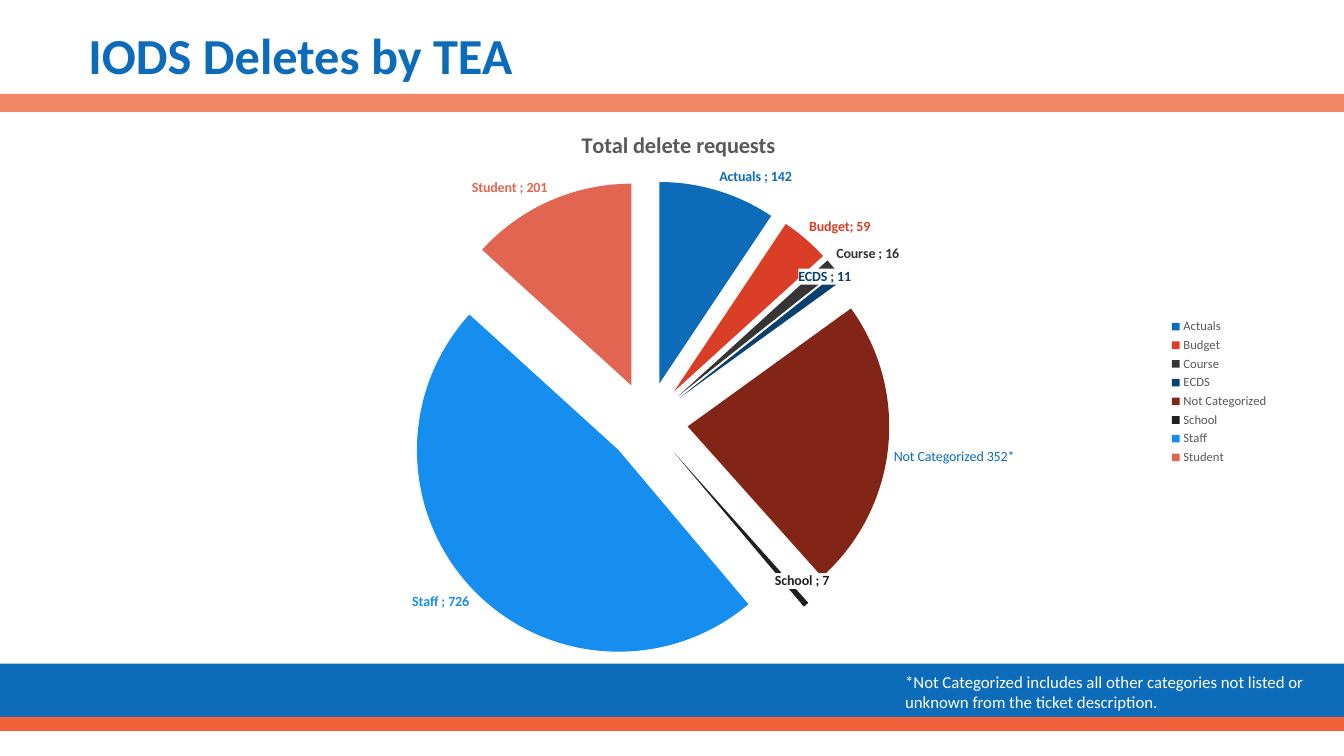
from dataclasses import dataclass

from lxml import etree
from pptx import Presentation
from pptx.chart.data import CategoryChartData
from pptx.dml.color import RGBColor
from pptx.enum.chart import XL_CHART_TYPE, XL_LABEL_POSITION, XL_LEGEND_POSITION
from pptx.enum.shapes import MSO_SHAPE
from pptx.enum.text import MSO_ANCHOR, PP_ALIGN
from pptx.oxml import parse_xml
from pptx.util import Pt

PIE = XL_CHART_TYPE.PIE_EXPLODED
OUTSIDE_END = XL_LABEL_POSITION.OUTSIDE_END
LEGEND_RIGHT = XL_LEGEND_POSITION.RIGHT
RECTANGLE = MSO_SHAPE.RECTANGLE
MIDDLE = MSO_ANCHOR.MIDDLE
LEFT = PP_ALIGN.LEFT
CHART_NS = "http://schemas.openxmlformats.org/drawingml/2006/chart"
DRAWING_NS = "http://schemas.openxmlformats.org/drawingml/2006/main"
C = f"{{{CHART_NS}}}"


@dataclass(frozen=True)
class Theme:
    font: str = "Calibri"
    blue: str = "0D6CB9"
    orange: str = "F16038"
    salmon: str = "F48668"
    white: str = "FFFFFF"
    grey: str = "595959"
    black: str = "000000"
    title_size: float = 36
    chart_title_size: float = 16
    note_size: float = 12
    label_size: float = 10
    legend_size: float = 9


THEME = Theme()

REQUESTS = [
    ("Actuals ", 142, THEME.blue),
    ("Budget", 59, "DA3E26"),
    ("Course ", 16, "363534"),
    ("ECDS ", 11, "08416F"),
    ("Not Categorized", 354, "832516"),
    ("School ", 7, "20201F"),
    ("Staff ", 726, "168EEF"),
    ("Student ", 201, "E16551"),
]
WRITTEN_LABELS = {"Not Categorized": "Not Categorized 352*"}
LABEL_SHIFTS = {"ECDS ": (-0.04, 0.02), "School ": (-0.03, -0.06)}


def style_font(font, size, color, bold=False):
    font.name = THEME.font
    font.size = Pt(size)
    font.bold = bold
    font.color.rgb = RGBColor.from_string(color)


def write_text(frame, text, *, size, color, bold=False, spacing=None, align=LEFT):
    paragraph = frame.paragraphs[0]
    paragraph.alignment = align
    paragraph.line_spacing = spacing
    run = paragraph.add_run()
    run.text = text
    style_font(run.font, size, color, bold)


def add_band(slide, box, color):
    band = slide.shapes.add_shape(RECTANGLE, *map(Pt, box))
    band.shadow.inherit = False
    band.fill.solid()
    band.fill.fore_color.rgb = RGBColor.from_string(color)
    band.line.fill.background()


def set_layout(parent, index, **settings):
    for old in parent.findall(C + "layout"):
        parent.remove(old)
    layout = etree.Element(C + "layout")
    manual = etree.SubElement(layout, C + "manualLayout")
    for tag, value in settings.items():
        etree.SubElement(manual, C + tag).set("val", str(value))
    parent.insert(index, layout)


def add_header(slide, box):
    left, top, width, height = box
    title = slide.shapes.title
    title.left, title.top = Pt(left + 56), Pt(top + 12)
    title.width, title.height = Pt(width - 84), Pt(59)
    title.text_frame.vertical_anchor = MIDDLE
    write_text(title.text_frame, "IODS Deletes by TEA", size=THEME.title_size,
               color=THEME.blue, bold=True, spacing=0.9)
    add_band(slide, (left, top + height - 13, width, 13), THEME.salmon)


def add_footer(slide, box):
    left, top, width, height = box
    add_band(slide, (left, top, width, height - 10), THEME.blue)
    add_band(slide, (left, top + height - 10, width, 10), THEME.orange)
    note = slide.shapes.add_textbox(Pt(left + 639.4), Pt(top + 2), Pt(310.3), Pt(36))
    note.text_frame.word_wrap = True
    write_text(note.text_frame,
               "*Not Categorized includes all other categories not listed or "
               "unknown from the ticket description.",
               size=THEME.note_size, color=THEME.white)


def label_slice(point, category, color):
    label = point.data_label
    if category in WRITTEN_LABELS:
        write_text(label.text_frame, WRITTEN_LABELS[category],
                   size=THEME.label_size, color=THEME.blue)
        label.position = OUTSIDE_END
        return
    style_font(label.font, THEME.label_size, color, bold=True)
    label.position = OUTSIDE_END
    element = label._get_or_add_dLbl()
    element.find(C + "showCatName").set("val", "1")
    etree.SubElement(element, C + "separator").text = "; "
    element.find(C + "txPr").addprevious(parse_xml(
        f'<c:spPr xmlns:c="{CHART_NS}" xmlns:a="{DRAWING_NS}"><a:solidFill>'
        f'<a:srgbClr val="{THEME.white}"/></a:solidFill></c:spPr>'))
    if category in LABEL_SHIFTS:
        x, y = LABEL_SHIFTS[category]
        set_layout(element, 1, x=x, y=y)


def add_requests_chart(slide, box):
    data = CategoryChartData()
    data.categories = [category for category, _, _ in REQUESTS]
    data.add_series("Series 1", [count for _, count, _ in REQUESTS])
    chart = slide.shapes.add_chart(PIE, *map(Pt, box), data).chart
    style_font(chart.font, THEME.label_size, THEME.black)

    write_text(chart.chart_title.text_frame, "Total delete requests",
               size=THEME.chart_title_size, color=THEME.grey, bold=True)
    set_layout(chart.chart_title._element, 1, xMode="edge", yMode="edge", x=0.4, y=0.06)

    chart.has_legend = True
    chart.legend.position = LEGEND_RIGHT
    chart.legend.include_in_layout = False
    style_font(chart.legend.font, THEME.legend_size, THEME.grey)

    plot = chart.plots[0]
    plot.vary_by_categories = True
    set_layout(plot._element.getparent(), 0, layoutTarget="inner", xMode="edge",
               yMode="edge", x=0.03, y=0.15, w=0.86, h=0.8)
    series = plot.series[0]
    for old in series._element.findall(C + "explosion"):
        series._element.remove(old)
    explosion = etree.Element(C + "explosion")
    explosion.set("val", "20")
    series._element.find(C + "tx").addnext(explosion)
    for index, (category, _, color) in enumerate(REQUESTS):
        point = series.points[index]
        point.format.fill.solid()
        point.format.fill.fore_color.rgb = RGBColor.from_string(color)
        label_slice(point, category, color)


def main():
    deck = Presentation()
    deck.slide_width, deck.slide_height = Pt(960), Pt(540)
    slide = deck.slides.add_slide(deck.slide_layouts[5])
    add_header(slide, (0, 0, 960, 80))
    add_footer(slide, (0, 474, 960, 48))
    add_requests_chart(slide, (78.5, 64, 835, 432))
    deck.save("out.pptx")


if __name__ == "__main__":
    main()
